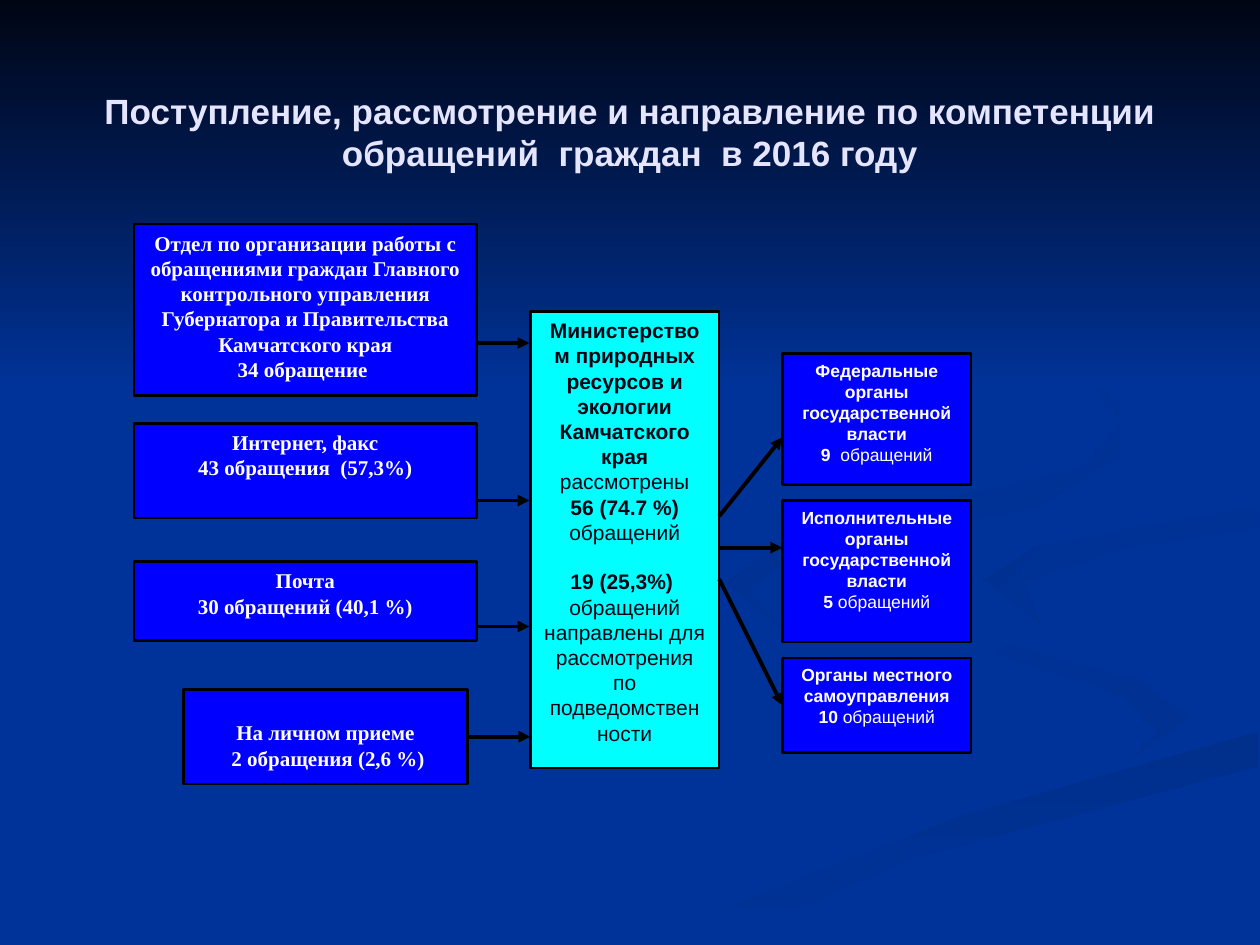
from lxml import etree
from pptx import Presentation
from pptx.dml.color import RGBColor
from pptx.enum.shapes import MSO_CONNECTOR, MSO_SHAPE
from pptx.enum.text import MSO_ANCHOR, PP_ALIGN
from pptx.oxml.ns import qn
from pptx.util import Pt

RECT = MSO_SHAPE.RECTANGLE
STRAIGHT = MSO_CONNECTOR.STRAIGHT
CENTER = PP_ALIGN.CENTER
TOP, MIDDLE = MSO_ANCHOR.TOP, MSO_ANCHOR.MIDDLE
LEFT_SIDE, RIGHT_SIDE = 1, 3
NAVY, BLUE, CYAN = "003399", "0000FF", "00FFFF"
BLACK, WHITE, INK, LAVENDER = "000000", "FFFFFF", "000514", "E5E5FF"
SANS, SERIF = "Arial", "Times New Roman"
rgb = RGBColor.from_string

prs = Presentation()
prs.slide_width, prs.slide_height = Pt(720), Pt(540)
slide = prs.slides.add_slide(prs.slide_layouts[5])
shapes = slide.shapes


def add_box(left, top, width, height, paragraphs, fill=BLUE, color=WHITE, font=SANS, size=12):
    """Add a bordered box; each paragraph is a list of (text, bold) runs."""
    box = shapes.add_shape(RECT, Pt(left), Pt(top), Pt(width), Pt(height))
    box.shadow.inherit = False
    box.fill.solid()
    box.fill.fore_color.rgb = rgb(fill)
    box.line.color.rgb = rgb(BLACK)
    box.line.width = Pt(1.5)
    frame = box.text_frame
    frame.word_wrap = True
    frame.vertical_anchor = TOP
    for index, runs in enumerate(paragraphs):
        paragraph = frame.add_paragraph() if index else frame.paragraphs[0]
        paragraph.alignment = CENTER
        for text, bold in runs:
            run = paragraph.add_run()
            run.text = text
            run.font.name = font
            run.font.size = Pt(size)
            run.font.bold = bold
            run.font.color.rgb = rgb(color)
    return box


def add_arrow(x1, y1, x2, y2):
    arrow = shapes.add_connector(STRAIGHT, Pt(x1), Pt(y1), Pt(x2), Pt(y2))
    arrow.line.color.rgb = rgb(BLACK)
    arrow.line.width = Pt(2.25)
    etree.SubElement(arrow.line._get_or_add_ln(), qn("a:tailEnd"), type="triangle")
    etree.SubElement(arrow._element.spPr, qn("a:effectLst"))
    return arrow


# Background: swirls, then the dark band at the top
slide.background.fill.solid()
slide.background.fill.fore_color.rgb = rgb(NAVY)
# (first colour, last colour, clockwise angle, outline)
backdrop = [
    (NAVY, "003193", 45, [
        (521, 334), (546, 359), (652, 389), (679, 410), (644, 436), (661, 418),
        (642, 398), (552, 369)]),
    ("002F8C", NAVY, 90, [
        (362, 539), (411, 539), (520, 491), (719, 438), (719, 418), (550, 466)]),
    ("003091", NAVY, 45, [
        (562, 331), (595, 357), (585, 333), (645, 313), (719, 302), (719, 289), (592, 312)]),
    ("002F8E", NAVY, 45, [
        (492, 310), (594, 289), (640, 261), (641, 233), (607, 198), (549, 168), (609, 201),
        (640, 241), (620, 266), (450, 307), (415, 333), (448, 360), (427, 338), (449, 320)]),
    (INK, NAVY, 90, [(0, 0), (0, 222), (720, 222), (720, 0)]),
]
for first, last, angle, outline in backdrop:
    builder = shapes.build_freeform(*outline[0], scale=Pt(1))
    builder.add_line_segments(outline[1:], close=True)
    area = builder.convert_to_shape()
    area.shadow.inherit = False
    area.line.fill.background()
    area.fill.gradient()
    area.fill.gradient_angle = -angle % 360
    for stop, color in zip(area.fill.gradient_stops, (first, last)):
        stop.color.rgb = rgb(color)

# Title, brought in front of the band
title = shapes.title
shapes.element.append(title.element)
title.left, title.top, title.width, title.height = Pt(36), Pt(21.6), Pt(648), Pt(106.6)
title.text_frame.word_wrap = True
title.text_frame.vertical_anchor = MIDDLE
heading = title.text_frame.paragraphs[0]
heading.alignment = CENTER
heading_run = heading.add_run()
heading_run.text = "Поступление, рассмотрение и направление по компетенции обращений  граждан  в 2016 году"
heading_run.font.name = SANS
heading_run.font.size = Pt(20)
heading_run.font.bold = True
heading_run.font.color.rgb = rgb(LAVENDER)

# Ministry in the middle
ministry = add_box(303, 178, 108, 261, [
    [("Министерством природных ресурсов и экологии Камчатского края ", True),
     ("рассмотрены", False)],
    [("56 (74.7 %) ", True), ("обращений", False)],
    [("19 (25,3%) ", True)],
    [("обращений направлены для рассмотрения по подведомствен", False)],
    [("ности", False)],
], fill=CYAN, color=INK)
ministry.text_frame.paragraphs[2].space_before = Pt(14)

# Personal reception, with its text set lower
reception = add_box(105, 394, 162, 54, [
    [("На личном приеме", True)],
    [(" 2 обращения (2,6 %)", True)],
], font=SERIF)
reception.text_frame.margin_top = Pt(17.4)

# Bodies that receive forwarded appeals
recipients = [
    (202, 75, "Федеральные органы государственной власти", "9  "),
    (286, 81, "Исполнительные органы государственной власти", "5 "),
    (376, 54, "Органы местного самоуправления", "10 "),
]
for top, height, body, count in recipients:
    recipient = add_box(447, top, 108, height,
                        [[(body, True)], [(count, True), ("обращений", False)]], size=10)

# Arrows into and out of the ministry
for y in (196, 286, 358):
    add_arrow(266, y, 302.5, y)
add_arrow(267, 421, 303, 421).begin_connect(reception, RIGHT_SIDE)
add_arrow(411, 295, 447, 250)
add_arrow(411, 313, 447, 313)
add_arrow(411, 331, 447, 403).end_connect(recipient, LEFT_SIDE)

# Channels of incoming appeals
channels = [
    (128, 98, "Отдел по организации работы с обращениями граждан Главного контрольного "
              "управления Губернатора и Правительства Камчатского края", "34 обращение "),
    (242, 54, "Интернет, факс", "43 обращения  (57,3%)"),
    (321, 45, "Почта", "30 обращений (40,1 %)"),
]
for top, height, channel, count in channels:
    add_box(76.5, top, 196, height, [[(channel, True)], [(count, True)]], font=SERIF)

prs.save("out.pptx")
